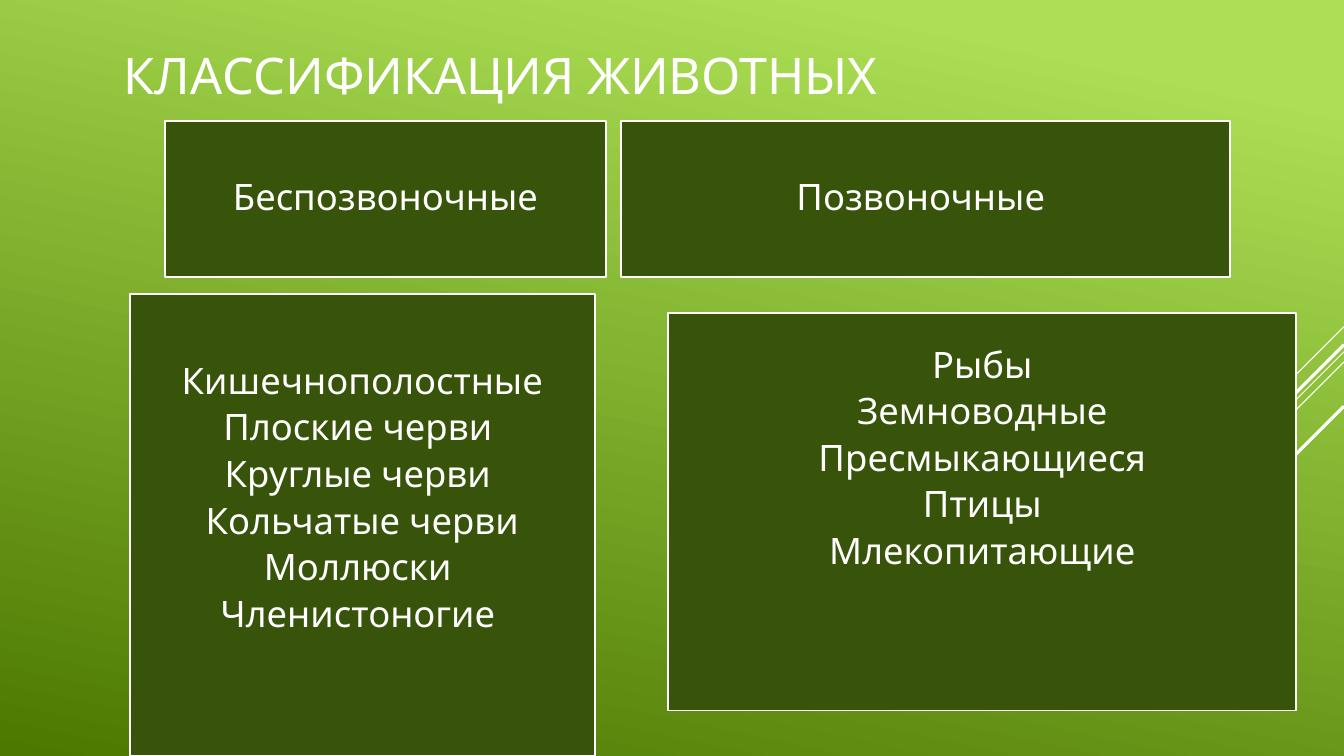
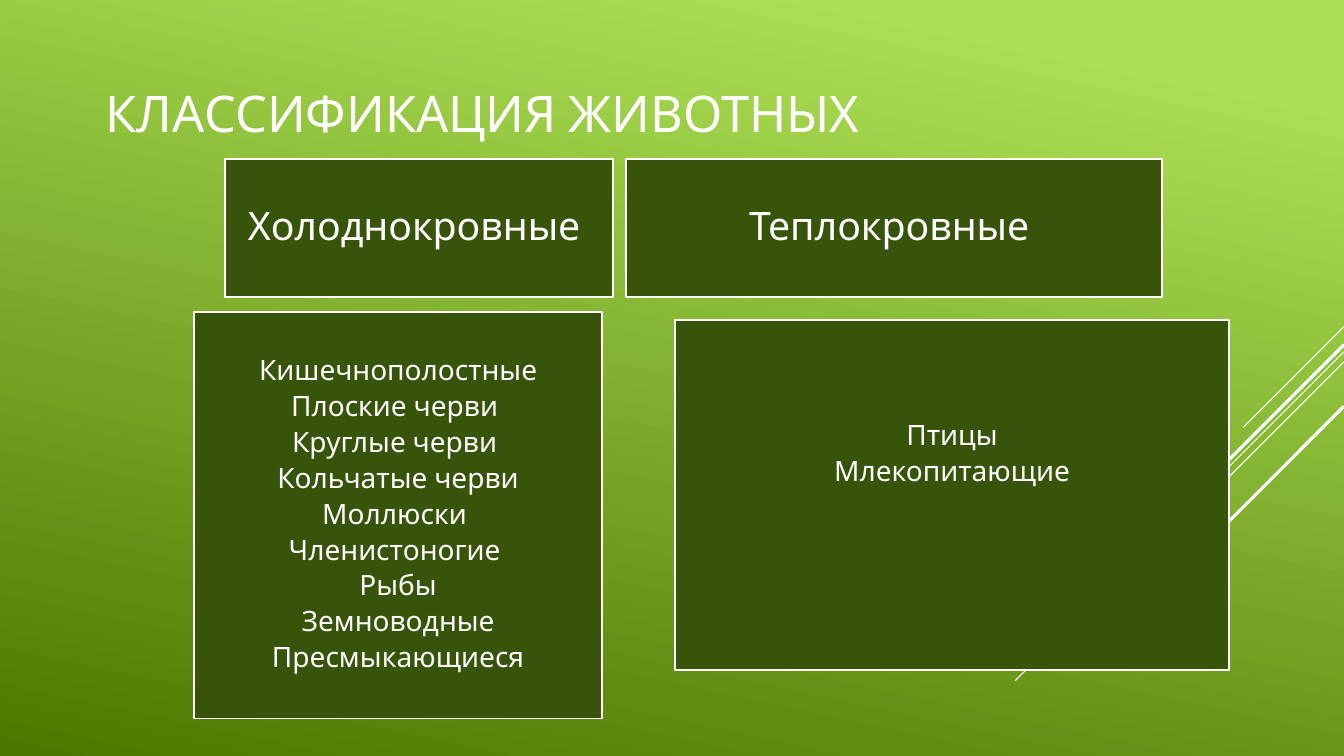
from lxml import etree
from pptx import Presentation
from pptx import util as u
from pptx.dml.color import RGBColor
from pptx.enum import shapes, text
from pptx.oxml.ns import qn

Pt = u.Pt
FONT = "League Spartan"
WHITE, PANEL = "FFFFFF", "38540A"
BACKGROUND = ((0.1, "ACDF55"), (1, "4C7800"))
WIDTH, HEIGHT = 960, 540
TITLE = "КЛАССИФИКАЦИЯ ЖИВОТНЫХ"
LINE_SPACING = 0.9
SPACE_AFTER = 0.2  # share of the font size
PITCH = 1.43  # distance between paragraphs, share of the font size

# Diagonals falling left from the right edge: top, extent, line width
DIAGONALS = [
    (233.3, 72, 0.75),
    (251.3, 234.7, 0.75),
    (258.5, 149, 0.75),
    (246.2, 137.5, 2.25),
    (290.2, 100, 2.25),
]

INVERTEBRATES = ["Кишечнополостные", "Плоские черви ", "Круглые черви ",
                 "Кольчатые черви", "Моллюски ", "Членистоногие "]
COLD_VERTEBRATES = ["Рыбы", "Земноводные", "Пресмыкающиеся"]
WARM_VERTEBRATES = ["Птицы", "Млекопитающие"]

# Panels: place, lines, font size, inset, free lines kept below the text
SLIDES = [
    {
        "title": (81.4, 19.4, 672, 67),
        "panels": [
            ((118.1, 86.4, 314.6, 111.6), ["Беспозвоночные"], 26, 7.9, 0),
            ((443.5, 86.4, 434.9, 111.6), ["Позвоночные "], 26, 7.9, 0),
            ((92.9, 210, 331.9, 330), INVERTEBRATES, 26, 7.9, 1),
            ((477.4, 223.4, 448.6, 284.2),
             COLD_VERTEBRATES + WARM_VERTEBRATES, 26, 7.9, 2),
        ],
    },
    {
        "title": (68.4, 20.9, 672, 118.8),
        "panels": [
            ((160.6, 113.6, 277.2, 98.6), ["Холоднокровные "], 28, 8.6, 0),
            ((447.1, 113.6, 383, 98.6), ["Теплокровные "], 28, 8.6, 0),
            ((138.4, 222.7, 291.9, 290.6),
             INVERTEBRATES + COLD_VERTEBRATES, 20, 5.8, 0),
            ((482.4, 228.4, 395.3, 250), WARM_VERTEBRATES, 20, 5.8, 2),
        ],
    },
]


def rgb(value):
    return RGBColor.from_string(value)


def add_span(para, words, size):
    span = para.add_run()
    span.text = words
    span.font.name = FONT
    span.font.size = Pt(size)
    span.font.color.rgb = rgb(WHITE)


def set_background(master):
    fill = master.background.fill
    fill.gradient()
    fill.gradient_angle = 258
    for stop, (position, color) in zip(fill.gradient_stops, BACKGROUND):
        stop.position = position
        stop.color.rgb = rgb(color)


def add_diagonals(page):
    for top, extent, width in DIAGONALS:
        line = page.shapes.add_connector(
            shapes.MSO_CONNECTOR.STRAIGHT,
            Pt(WIDTH), Pt(top), Pt(WIDTH - extent), Pt(top + extent))
        line.line.color.rgb = rgb(WHITE)
        line.line.width = Pt(width)
        etree.SubElement(line._element.spPr, qn("a:effectLst"))


def add_title(page, place):
    frame = page.shapes.add_textbox(*map(Pt, place)).text_frame
    frame.word_wrap = True
    frame.vertical_anchor = text.MSO_ANCHOR.MIDDLE
    add_span(frame.paragraphs[0], TITLE, 36)


def add_panel(page, place, lines, size, inset, free_lines):
    box = page.shapes.add_shape(shapes.MSO_SHAPE.RECTANGLE, *map(Pt, place))
    box.shadow.inherit = False
    box.fill.solid()
    box.fill.fore_color.rgb = rgb(PANEL)
    box.line.color.rgb = rgb(WHITE)
    box.line.width = Pt(1.25)

    frame = box.text_frame
    frame.word_wrap = True
    frame.vertical_anchor = text.MSO_ANCHOR.MIDDLE
    frame.margin_left = frame.margin_right = frame.margin_top = Pt(inset)
    frame.margin_bottom = Pt(inset + free_lines * size * PITCH)
    for index, words in enumerate(lines):
        para = frame.add_paragraph() if index else frame.paragraphs[0]
        para.alignment = text.PP_ALIGN.CENTER
        para.line_spacing = LINE_SPACING
        para.space_after = Pt(size * SPACE_AFTER)
        add_span(para, words, size)


def main():
    deck = Presentation()
    deck.slide_width, deck.slide_height = Pt(WIDTH), Pt(HEIGHT)
    set_background(deck.slide_master)
    for content in SLIDES:
        page = deck.slides.add_slide(deck.slide_layouts[6])
        add_diagonals(page)
        add_title(page, content["title"])
        for panel in content["panels"]:
            add_panel(page, *panel)
    deck.save("out.pptx")


if __name__ == "__main__":
    main()
